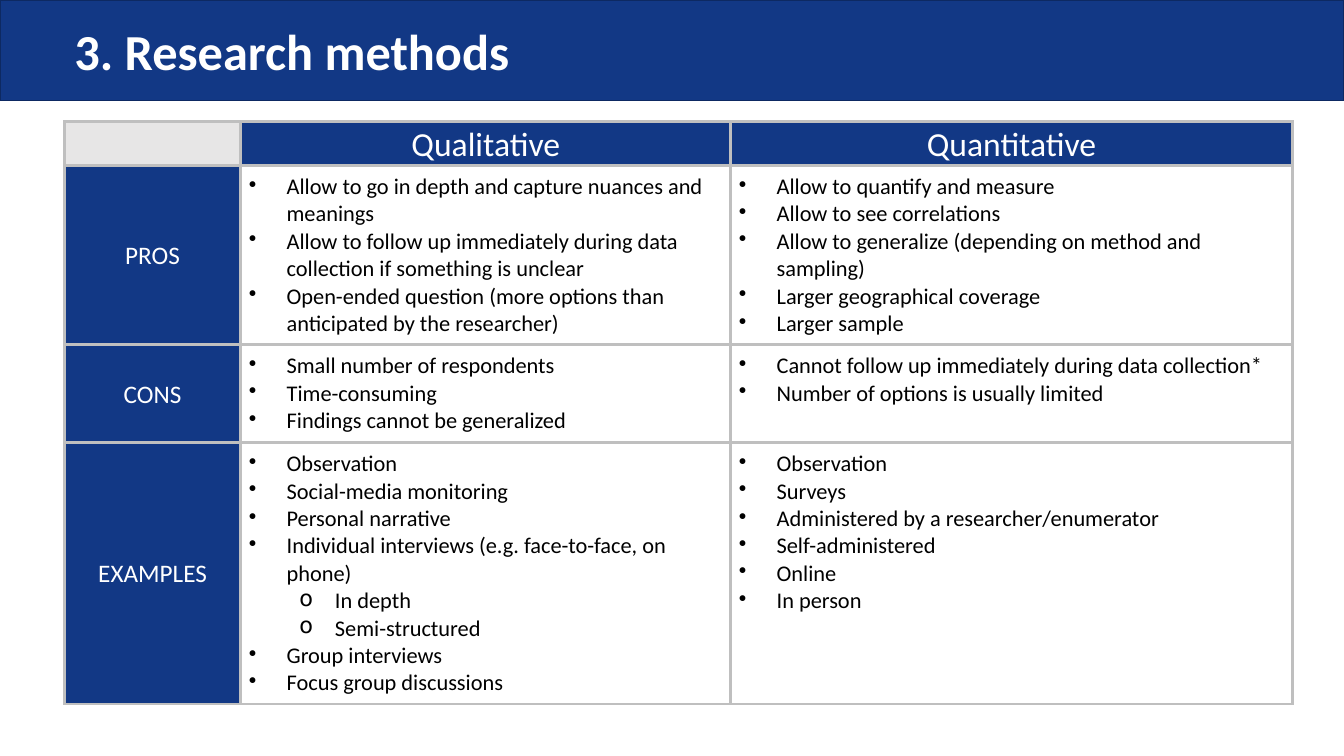
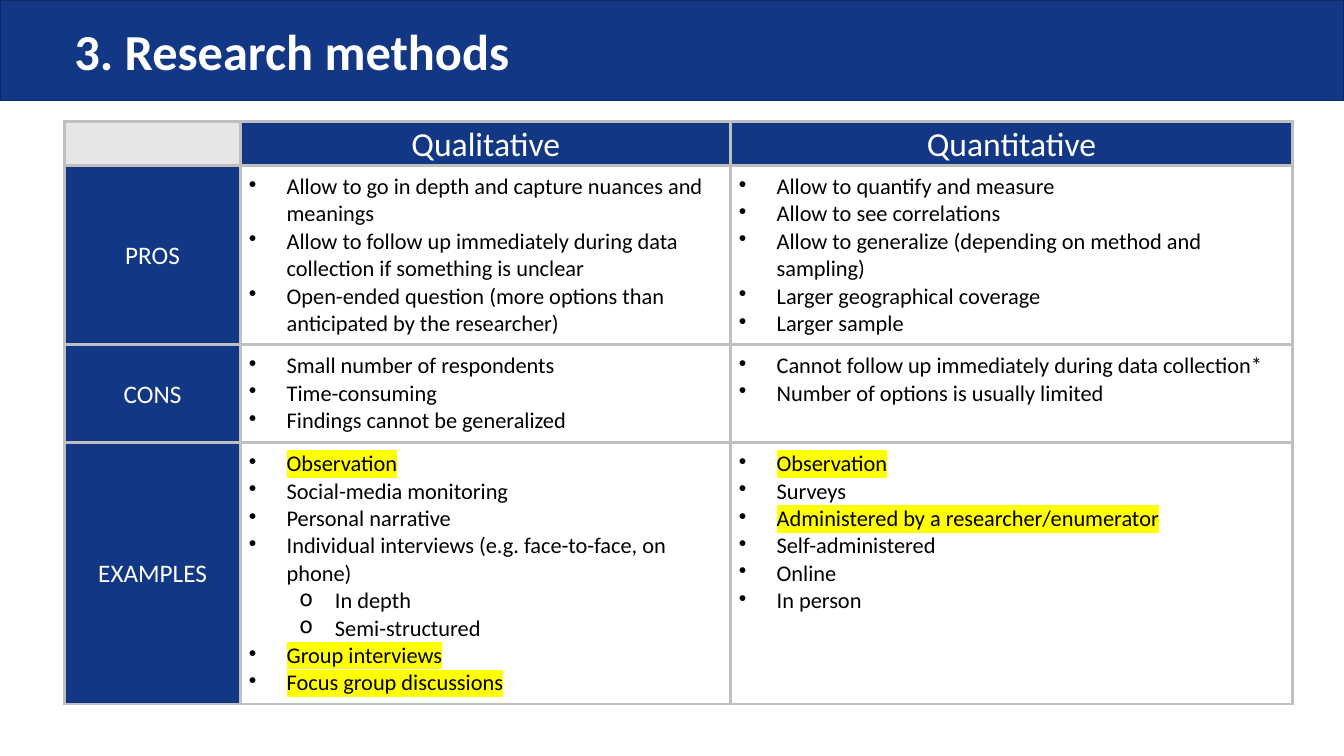
"""Builds two slides comparing qualitative and quantitative research methods."""
from lxml.etree import SubElement
from pptx import Presentation
from pptx.dml.color import RGBColor
from pptx.enum.shapes import MSO_SHAPE
from pptx.enum.text import MSO_ANCHOR, PP_ALIGN
from pptx.oxml import parse_xml
from pptx.oxml.ns import nsdecls, qn
from pptx.util import Pt

BLUE = RGBColor(0x12, 0x38, 0x85)
NAVY = RGBColor(0x0D, 0x29, 0x62)
GRAY = RGBColor(0xE7, 0xE6, 0xE6)
BORDER = RGBColor(0xBF, 0xBF, 0xBF)
YELLOW = RGBColor(0xFF, 0xFF, 0x00)
WHITE = RGBColor(0xFF, 0xFF, 0xFF)
BLACK = RGBColor(0x00, 0x00, 0x00)

TITLE = "3. Research methods"
HEADERS = ["", "Qualitative", "Quantitative"]
COL_WIDTHS = [126, 350, 401]
ROW_HEIGHTS = [31, 128, 70, 187]
SUB_ITEMS = {"In depth", "Semi-structured"}
ROWS = [
    ("PROS", [
        "Allow to go in depth and capture nuances and meanings",
        "Allow to follow up immediately during data collection if something is unclear",
        "Open-ended question (more options than anticipated by the researcher)",
    ], [
        "Allow to quantify and measure",
        "Allow to see correlations",
        "Allow to generalize (depending on method and sampling)",
        "Larger geographical coverage",
        "Larger sample",
    ]),
    ("CONS", [
        "Small number of respondents",
        "Time-consuming",
        "Findings cannot be generalized",
    ], [
        "Cannot follow up immediately during data collection*",
        "Number of options is usually limited",
    ]),
    ("EXAMPLES", [
        "Observation",
        "Social-media monitoring",
        "Personal narrative",
        "Individual interviews (e.g. face-to-face, on phone)",
        "In depth",
        "Semi-structured",
        "Group interviews",
        "Focus group discussions",
    ], [
        "Observation",
        "Surveys",
        "Administered by a researcher/enumerator",
        "Self-administered",
        "Online",
        "In person",
    ]),
]
HIGHLIGHTS = [
    set(),
    {"Observation", "Group interviews", "Focus group discussions",
     "Administered by a researcher/enumerator"},
]

LABEL_CELL = {"margin_left": Pt(4), "margin_right": Pt(4), "margin_top": 0, "margin_bottom": 0}
BODY_CELL = {f"margin_{side}": Pt(5.76) for side in ("left", "right", "top", "bottom")}
LABEL_PARA = {"alignment": PP_ALIGN.CENTER, "line_spacing": 1.07, "space_after": Pt(8)}


def add_text(p, text, color, highlight=None, **font):
    """Adds a run in the deck's font."""
    r = p.add_run()
    r.text = text
    r.font.color.rgb = color
    if highlight:
        mark = SubElement(r.font._element, qn("a:highlight"))
        SubElement(mark, qn("a:srgbClr"), val=str(highlight))
    for key, value in {"name": "Calibri", **font}.items():
        setattr(r.font, key, value)


def style_cell(cell, fill, **values):
    """Gives a table cell its borders, fill and layout values."""
    tcPr = cell._tc.get_or_add_tcPr()
    for side in "LRTB":
        tcPr.append(parse_xml(
            f'<a:ln{side} {nsdecls("a")} w="{Pt(2.25)}"><a:solidFill>'
            f'<a:srgbClr val="{BORDER}"/></a:solidFill></a:ln{side}>'))
    cell.fill.solid()
    cell.fill.fore_color.rgb = fill
    for key, value in values.items():
        setattr(cell, key, value)


prs = Presentation()
prs.slide_width, prs.slide_height = Pt(960), Pt(540)

for highlights in HIGHLIGHTS:
    s = prs.slides.add_slide(prs.slide_layouts[6])

    band = s.shapes.add_shape(MSO_SHAPE.RECTANGLE, 0, 0, prs.slide_width, Pt(72))
    band.shadow.inherit = False
    band.fill.solid()
    band.fill.fore_color.rgb = BLUE
    band.line.color.rgb = NAVY
    band.line.width = Pt(1)

    tf = s.shapes.add_textbox(Pt(46), Pt(9.5), Pt(773), Pt(59)).text_frame
    tf.word_wrap = True
    tf.vertical_anchor = MSO_ANCHOR.MIDDLE
    p = tf.paragraphs[0]
    p.line_spacing = 0.9
    add_text(p, TITLE, WHITE, size=Pt(36), bold=True)

    table = s.shapes.add_table(
        len(ROW_HEIGHTS), len(COL_WIDTHS), Pt(46), Pt(87),
        Pt(sum(COL_WIDTHS)), Pt(sum(ROW_HEIGHTS))).table
    table.first_row = table.horz_banding = False
    for column, width in zip(table.columns, COL_WIDTHS):
        column.width = Pt(width)
    for row, height in zip(table.rows, ROW_HEIGHTS):
        row.height = Pt(height)

    labels = [(0, j, text, 24, MSO_ANCHOR.BOTTOM) for j, text in enumerate(HEADERS)]
    labels += [(i, 0, row[0], 18, MSO_ANCHOR.MIDDLE) for i, row in enumerate(ROWS, 1)]
    for i, j, text, size, anchor in labels:
        cell = table.cell(i, j)
        style_cell(cell, BLUE if text else GRAY, vertical_anchor=anchor, **LABEL_CELL)
        if text:
            p = cell.text_frame.paragraphs[0]
            for key, value in LABEL_PARA.items():
                setattr(p, key, value)
            add_text(p, text, WHITE, size=Pt(size))

    for i, (_, *columns) in enumerate(ROWS, 1):
        for j, items in enumerate(columns, 1):
            cell = table.cell(i, j)
            style_cell(cell, WHITE, **BODY_CELL)
            tf = cell.text_frame
            for k, text in enumerate(items):
                p = tf.add_paragraph() if k else tf.paragraphs[0]
                sub = text in SUB_ITEMS
                p.level = int(sub)
                margin, hang, bullet = (61.5, 25.5, "o") if sub else (27, 27, "•")
                pPr = p._p.get_or_add_pPr()
                pPr.set("marL", str(Pt(margin)))
                pPr.set("indent", str(-Pt(hang)))
                SubElement(pPr, qn("a:buChar"), char=bullet)
                add_text(p, text, BLACK, YELLOW if text in highlights else None, size=Pt(16))

prs.save("out.pptx")
